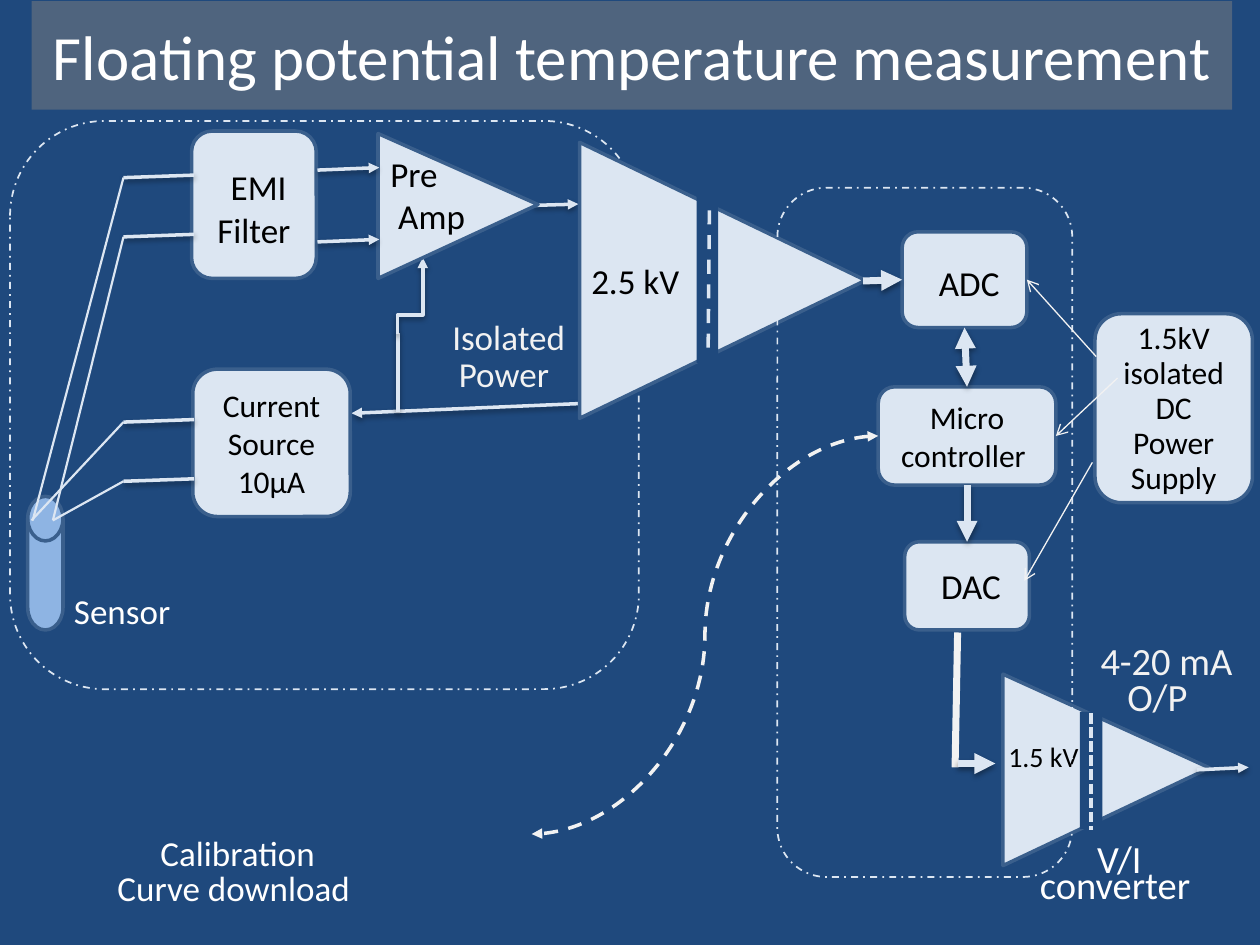
from lxml.etree import SubElement
from pptx import Presentation
from pptx.dml.color import RGBColor
from pptx.enum.dml import MSO_LINE as Dash
from pptx.enum.shapes import MSO_CONNECTOR as Link, MSO_SHAPE as Kind
from pptx.enum.text import MSO_ANCHOR as Anchor, MSO_AUTO_SIZE as AutoSize, PP_ALIGN as Align
from pptx.oxml.ns import qn
from pptx.util import Emu, Pt

PX = 9144
NAVY = RGBColor(0x1F, 0x49, 0x7D)
GRAY = RGBColor(0x80, 0x80, 0x80)
PALE = RGBColor(0xDC, 0xE6, 0xF2)
EDGE = RGBColor(0x3A, 0x5F, 0x8C)
SENSOR = RGBColor(0x8E, 0xB4, 0xE3)
LIGHT = RGBColor(0xF2, 0xF2, 0xF2)
WHITE = RGBColor(0xFF, 0xFF, 0xFF)
BLACK = RGBColor(0x00, 0x00, 0x00)


def px(*lengths):
    """Turn whole px into EMU."""
    return [Emu(length * PX) for length in lengths]


def apply(target, **formats):
    """Set each format value on the target."""
    for name, value in formats.items():
        setattr(target, name, value)


def write(shape, paragraphs, size, color=BLACK, lead=None, spacing=None, align=Align.CENTER):
    """Fill a shape with paragraphs, the first one led by a space of its own size."""
    frame = shape.text_frame
    apply(frame, word_wrap=True, vertical_anchor=Anchor.MIDDLE)
    for index, text in enumerate(paragraphs):
        paragraph = frame.add_paragraph() if index else frame.paragraphs[0]
        paragraph.alignment = align
        if spacing:
            paragraph.line_spacing = Pt(spacing)
        parts = [(text, size)]
        if lead and not index:
            parts.insert(0, (" ", lead))
        for part, points in parts:
            run = paragraph.add_run()
            run.text = part
            apply(run.font, size=Pt(points), name="Calibri")
            run.font.color.rgb = color


class Region:
    """Places parts relative to the top left corner of a box."""

    def __init__(self, shapes, box):
        """Keep the shapes to add to and the box."""
        self.shapes = shapes
        self.left, self.top, self.width, self.height = box

    def shape(self, kind, left, top, width, height, fill=PALE, edge=EDGE, rotation=0):
        """Add a preset shape, without fill or outline where the colour is None."""
        place = px(self.left + left, self.top + top, width, height)
        shape = self.shapes.add_shape(kind, *place)
        apply(shape, rotation=rotation)
        shape.shadow.inherit = False
        for paint, color in ((shape.fill, fill), (shape.line.fill, edge)):
            if color is None:
                paint.background()
            else:
                paint.solid()
                paint.fore_color.rgb = color
        shape.line.width = Pt(2)
        return shape

    def block(self, place, paragraphs, size, **formats):
        """Add a filled rounded block with text."""
        shape = self.shape(Kind.ROUNDED_RECTANGLE, *place)
        write(shape, paragraphs, size, **formats)
        return shape

    def label(self, place, paragraphs, size, **formats):
        """Add text on an unpainted rounded rectangle."""
        shape = self.shape(Kind.ROUNDED_RECTANGLE, *place, fill=None, edge=None)
        write(shape, paragraphs, size, **formats)

    def frame(self):
        """Outline the whole box with a dash-dot line."""
        place = (0, 0, self.width, self.height)
        shape = self.shape(Kind.ROUNDED_RECTANGLE, *place, fill=None, edge=PALE)
        apply(shape.line, width=Pt(1), dash_style=Dash.DASH_DOT)

    def line(self, start, end, width=2, color=PALE, head=None, tail=None,
             dash=None, shadow=True, link=Link.STRAIGHT):
        """Add a connector; an end is a point or a pair of shape and side."""
        points = [(0, 0) if hasattr(point[0], "shape_id")
                  else (self.left + point[0], self.top + point[1]) for point in (start, end)]
        connector = self.shapes.add_connector(link, *px(*points[0], *points[1]))
        for join, point in ((connector.begin_connect, start), (connector.end_connect, end)):
            if hasattr(point[0], "shape_id"):
                join(*point)
        connector.line.color.rgb = color
        apply(connector.line, width=Pt(width), dash_style=dash)
        outline = connector.line._get_or_add_ln()
        for tag, arrow in (("a:headEnd", head), ("a:tailEnd", tail)):
            if arrow:
                SubElement(outline, qn(tag), type=arrow)
        effects = SubElement(connector._element.spPr, qn("a:effectLst"))
        if shadow:
            cast = SubElement(effects, qn("a:outerShdw"), blurRad="40000", dist="20000",
                              dir="5400000", rotWithShape="0")
            black = SubElement(cast, qn("a:srgbClr"), val=str(BLACK))
            SubElement(black, qn("a:alpha"), val="38000")
        return connector


def add_title(slide, box):
    """Place the title on its half transparent band."""
    title = slide.shapes.title
    left, top, width, height = px(*box)
    apply(title, left=left, top=top, width=width, height=height)
    title.fill.solid()
    title.fill.fore_color.rgb = GRAY
    SubElement(title._element.spPr.find(".//" + qn("a:srgbClr")), qn("a:alpha"), val="50000")
    write(title, ["Floating potential temperature measurement"], 36, WHITE)
    title.text_frame.auto_size = AutoSize.NONE


def add_front_end(slide, box):
    """Draw the sensor, filter, current source and preamplifier."""
    region = Region(slide.shapes, box)
    region.frame()
    region.line((459, 224), (271, 232), tail="triangle")
    region.line((308, 168), (308, 231))
    region.line((416, 67), (451, 66), tail="triangle")
    region.shape(Kind.FLOWCHART_MAGNETIC_DISK, 14, 298, 28, 106, fill=SENSOR)
    region.block((144, 8, 99, 117), ["EMI", "Filter"], 20, lead=24)
    region.block((145, 197, 125, 117), ["Current Source", "10μA"], 18)

    feed = region.line((287, 129), (348, 149), head="triangle", link=Link.ELBOW)
    properties = feed._element.spPr
    properties.find(qn("a:xfrm")).set("rot", "5400000")
    guides = properties.find(qn("a:prstGeom")).find(qn("a:avLst"))
    SubElement(guides, qn("a:gd"), name="adj1", fmla="val 74500")

    for top, tip in ((43, 18), (90, 34), (237, 17), (284, 34)):
        region.line((146, top), (90, top + 2))
        region.line((90, top + 2), (tip, 317), width=1.25, shadow=False)

    amplifier = region.shape(Kind.ISOSCELES_TRIANGLE, 298, 4, 115, 127, rotation=90)
    amplifier.adjustments[0] = 0.49
    for top in (39, 96):
        region.line((244, top), (293, top - 2), tail="triangle")
    name = slide.shapes.add_textbox(*px(region.left + 292, region.top + 20, 117, 77))
    write(name, ["Pre", " Amp"], 20, align=Align.LEFT)
    region.label((314, 154, 156, 70), ["Isolated Power"], 20, color=LIGHT, lead=24, spacing=20)
    region.label((19, 368, 140, 47), ["Sensor"], 20, color=WHITE, spacing=20)


def add_isolation_amplifier(slide, box):
    """Draw the triangle split by the 2.5 kV barrier."""
    region = Region(slide.shapes.add_group_shape().shapes, box)
    region.shape(Kind.ISOSCELES_TRIANGLE, 4, -4, 219, 227, rotation=90)
    region.shape(Kind.RECTANGLE, 93, 34, 17, 141, fill=NAVY, edge=None)
    region.line((103, 54), (102, 171), dash=Dash.DASH, shadow=False)
    Region(slide.shapes, box).label((-10, 88, 102, 39), ["2.5 kV"], 20, lead=24, align=Align.JUSTIFY)


def add_output_converter(slide, box):
    """Draw the isolated converter with its current output."""
    region = Region(slide.shapes.add_group_shape().shapes, box)
    triangle = region.shape(Kind.ISOSCELES_TRIANGLE, 6, -6, 152, 164, rotation=90)
    triangle.adjustments[0] = 0.49
    region.line((154, 76), (195, 74), tail="triangle")
    region.shape(Kind.RECTANGLE, 61, 30, 18, 93, fill=NAVY, edge=None)
    region.line((70, 31), (70, 124), dash=Dash.SQUARE_DOT, shadow=False)
    labels = Region(slide.shapes, box)
    labels.label((-15, 41, 102, 39), ["1.5 kV"], 16, lead=24, align=Align.JUSTIFY)
    labels.label((48, -27, 156, 70), ["4-20 mA", "O/P "], 22, color=LIGHT, lead=24, spacing=20)
    labels.label((-1, 141, 180, 47), ["V/I converter"], 22, color=WHITE, lead=22, spacing=15)


def add_digital_section(slide, box):
    """Draw the converters and controller, and return the two powered at mid side."""
    region = Region(slide.shapes, box)
    adc = region.block((99, 35, 99, 76), ["ADC"], 20, lead=24)
    controller = region.block((80, 158, 141, 78), ["Micro controller "], 18)
    dac = region.block((101, 281, 99, 70), [" DAC"], 20)
    region.line((68, 74), (adc, 1), width=4, tail="triangle")
    region.line((adc, 2), (controller, 0), width=4, head="triangle", tail="triangle")
    region.line((controller, 2), (dac, 0), width=4, tail="triangle")
    region.line((controller, 1), (-195, 513), color=LIGHT, head="triangle", tail="triangle",
                dash=Dash.DASH, shadow=False, link=Link.CURVE)
    region.line((143, 353), (141, 460), width=4, color=LIGHT, shadow=False)
    region.line((143, 457), (173, 457), width=4, tail="triangle")
    region.frame()
    return adc, controller


def add_power_supply(slide, box, adc, controller):
    """Draw the isolated supply and its three feeds."""
    region = Region(slide.shapes, box)
    region.block((0, 0, region.width, region.height), ["1.5kV isolated DC Power Supply"], 18, spacing=20)
    feeds = (((1, 34), (adc, 3)), ((18, 51), (controller, 3)), ((-2, 118), (-56, 212)))
    for start, end in feeds:
        region.line(start, end, width=0.75, color=LIGHT, tail="arrow", shadow=False)


def add_calibration_note(slide, box):
    """Place the note beside the download link."""
    region = Region(slide.shapes, box)
    region.label((0, 0, region.width, region.height), ["Calibration Curve download"], 20,
                 color=WHITE, lead=20, spacing=20)


def main():
    """Build the slide and save it."""
    presentation = Presentation()
    width, height = px(1000, 750)
    apply(presentation, slide_width=width, slide_height=height)
    slide = presentation.slides.add_slide(presentation.slide_layouts[5])
    slide.background.fill.solid()
    slide.background.fill.fore_color.rgb = NAVY
    add_title(slide, (25, 1, 953, 86))
    add_front_end(slide, (8, 96, 499, 451))
    add_isolation_amplifier(slide, (460, 113, 227, 219))
    add_output_converter(slide, (796, 535, 164, 152))
    adc, controller = add_digital_section(slide, (617, 149, 234, 547))
    add_power_supply(slide, (869, 249, 125, 150), adc, controller)
    add_calibration_note(slide, (76, 646, 219, 95))
    presentation.save("out.pptx")


if __name__ == "__main__":
    main()
